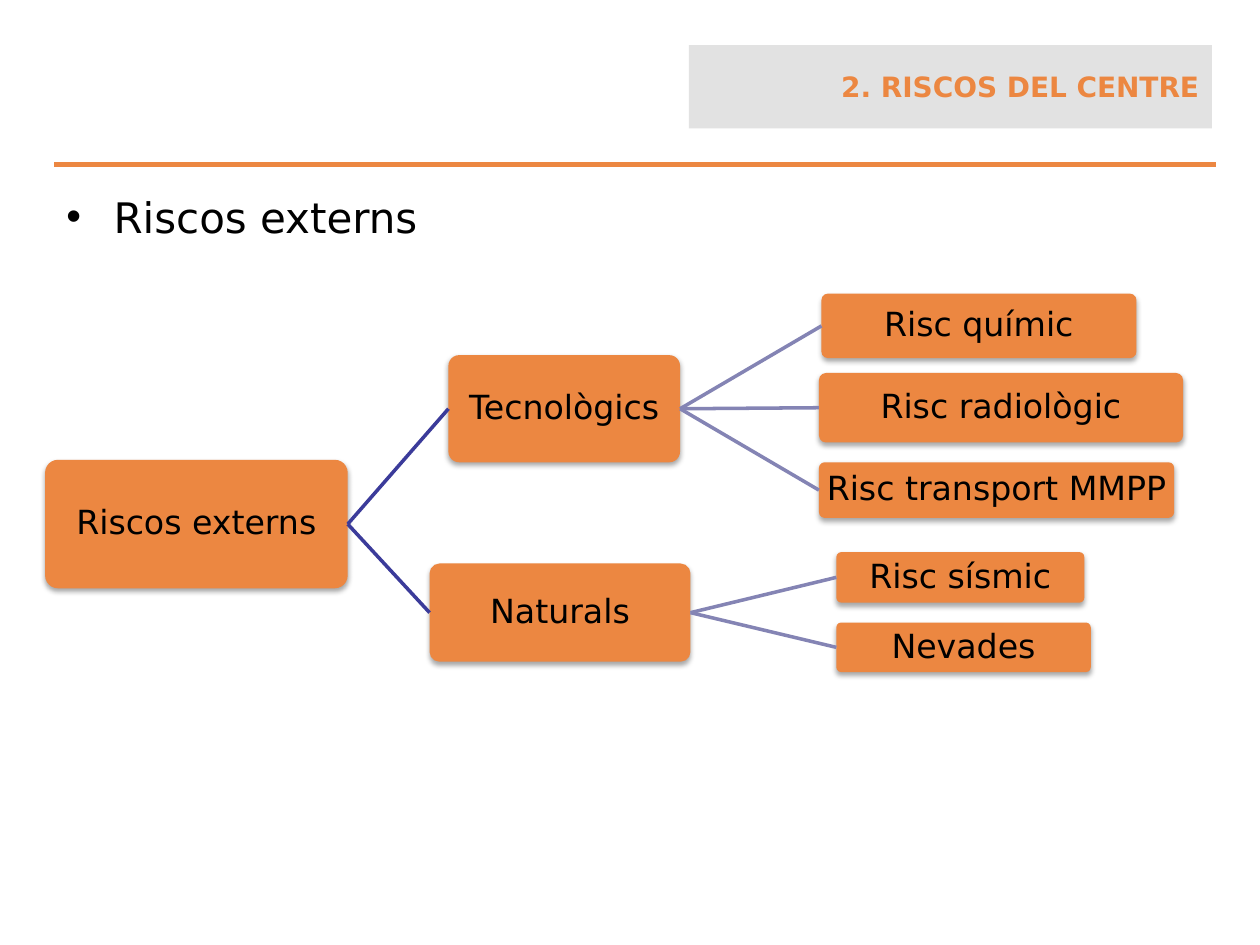
from pptx import Presentation
from pptx.dml.color import RGBColor
from pptx.enum.shapes import MSO_CONNECTOR, MSO_SHAPE
from pptx.enum.text import MSO_ANCHOR as Anchor, PP_ALIGN as Align
from pptx.oxml import parse_xml
from pptx.oxml.ns import nsdecls, qn
from pptx.util import Cm, Pt

COLOURS = {
    "orange": "EC8741",
    "grey": "E2E2E2",
    "black": "000000",
    "branch": "3B3B9A",
    "leaf": "8484B4",
}
FONT = "DejaVu Sans"

# Name, box (left, top, width, height in cm within the tree), children
TREE = ("Riscos externs", (0, 3.35, 6.1, 2.59), [
    ("Tecnològics", (8.13, 1.24, 4.67, 2.16), [
        ("Risc químic", (15.65, 0, 6.35, 1.3), []),
        ("Risc radiològic", (15.6, 1.6, 7.34, 1.4), []),
        ("Risc transport MMPP", (15.6, 3.4, 7.16, 1.12), []),
    ]),
    ("Naturals", (7.75, 5.44, 5.26, 1.98), [
        ("Risc sísmic", (15.95, 5.21, 5, 1.02), []),
        ("Nevades", (15.95, 6.63, 5.13, 1), []),
    ]),
])


def colour(name):
    return RGBColor.from_string(COLOURS[name])


def write(frame, text, size, ink="black", bold=False, **para_format):
    frame.word_wrap = True
    para = frame.paragraphs[0]
    for name, value in para_format.items():
        setattr(para, name, value)
    span = para.add_run()
    span.text = text
    for name, value in {"name": FONT, "size": Pt(size), "bold": bold}.items():
        setattr(span.font, name, value)
    span.font.color.rgb = colour(ink)
    return para


def add_box(page, kind, box, fill):
    shape = page.shapes.add_shape(kind, *map(Cm, box))
    shape.shadow.inherit = False
    shape.fill.solid()
    shape.fill.fore_color.rgb = colour(fill)
    shape.line.fill.background()
    shape.text_frame.vertical_anchor = Anchor.MIDDLE
    return shape


def add_line(page, ink, width, start=(0, 0), end=(0, 0)):
    line = page.shapes.add_connector(
        MSO_CONNECTOR.STRAIGHT, *map(Cm, (*start, *end)))
    line.line.color.rgb = colour(ink)
    line.line.width = Pt(width)
    line._element.spPr.append(parse_xml(f"<a:effectLst {nsdecls('a')}/>"))
    return line


def add_header(page, left, top, width):
    # Grey title band at the right, rule across the full width below
    band = add_box(page, MSO_SHAPE.RECTANGLE,
                   (left + 12.8, top, 10.54, 1.68), "grey")
    write(band.text_frame, "2. RISCOS DEL CENTRE", 16, "orange", True,
          alignment=Align.RIGHT)
    rule = top + 2.41
    add_line(page, "orange", 3, (left, rule), (left + width, rule))


def add_body(page, left, top, width, height):
    # Bulleted heading
    box = page.shapes.add_textbox(*map(Cm, (left, top, width, height)))
    para = write(box.text_frame, "Riscos externs", 24)
    props = para._p.get_or_add_pPr()
    props.set("marL", str(Cm(0.95)))
    props.set("indent", str(Cm(-0.95)))
    props.append(parse_xml(f'<a:buFont {nsdecls("a")} typeface="Arial"/>'))
    props.append(parse_xml(f'<a:buChar {nsdecls("a")} char="•"/>'))


def add_soft_shadow(shape):
    effects = shape._element.spPr.find(qn("a:effectLst"))
    effects.append(parse_xml(
        f'<a:outerShdw {nsdecls("a")} blurRad="{Pt(3.1)}" dist="{Pt(1.8)}" '
        f'dir="5400000" rotWithShape="0"><a:srgbClr val="{COLOURS["black"]}">'
        '<a:alpha val="35000"/></a:srgbClr></a:outerShdw>'))


def add_tree(page, left, top, node, level=0):
    # One rounded box, then its children, each joined to it by a line
    name, (x, y, width, height), children = node
    shape = add_box(page, MSO_SHAPE.ROUNDED_RECTANGLE,
                    (left + x, top + y, width, height), "orange")
    shape.adjustments[0] = 0.1
    add_soft_shadow(shape)
    frame = shape.text_frame
    for side in ("left", "top", "right", "bottom"):
        setattr(frame, f"margin_{side}", Cm(0.03))
    write(frame, name, 19, alignment=Align.CENTER, line_spacing=0.9)
    for child in children:
        child_shape = add_tree(page, left, top, child, level + 1)
        link = add_line(page, ("branch", "leaf")[level], 2)
        link.begin_connect(shape, 3)
        link.end_connect(child_shape, 1)
    return shape


def main():
    deck = Presentation()
    deck.slide_width, deck.slide_height = Cm(25.4), Cm(19.05)
    page = deck.slides.add_slide(deck.slide_layouts[6])
    add_header(page, 1.09, 0.91, 23.42)
    add_body(page, 1.09, 3.73, 23.06, 13.79)
    add_tree(page, 0.91, 5.92, TREE)
    deck.save("out.pptx")


if __name__ == "__main__":
    main()
